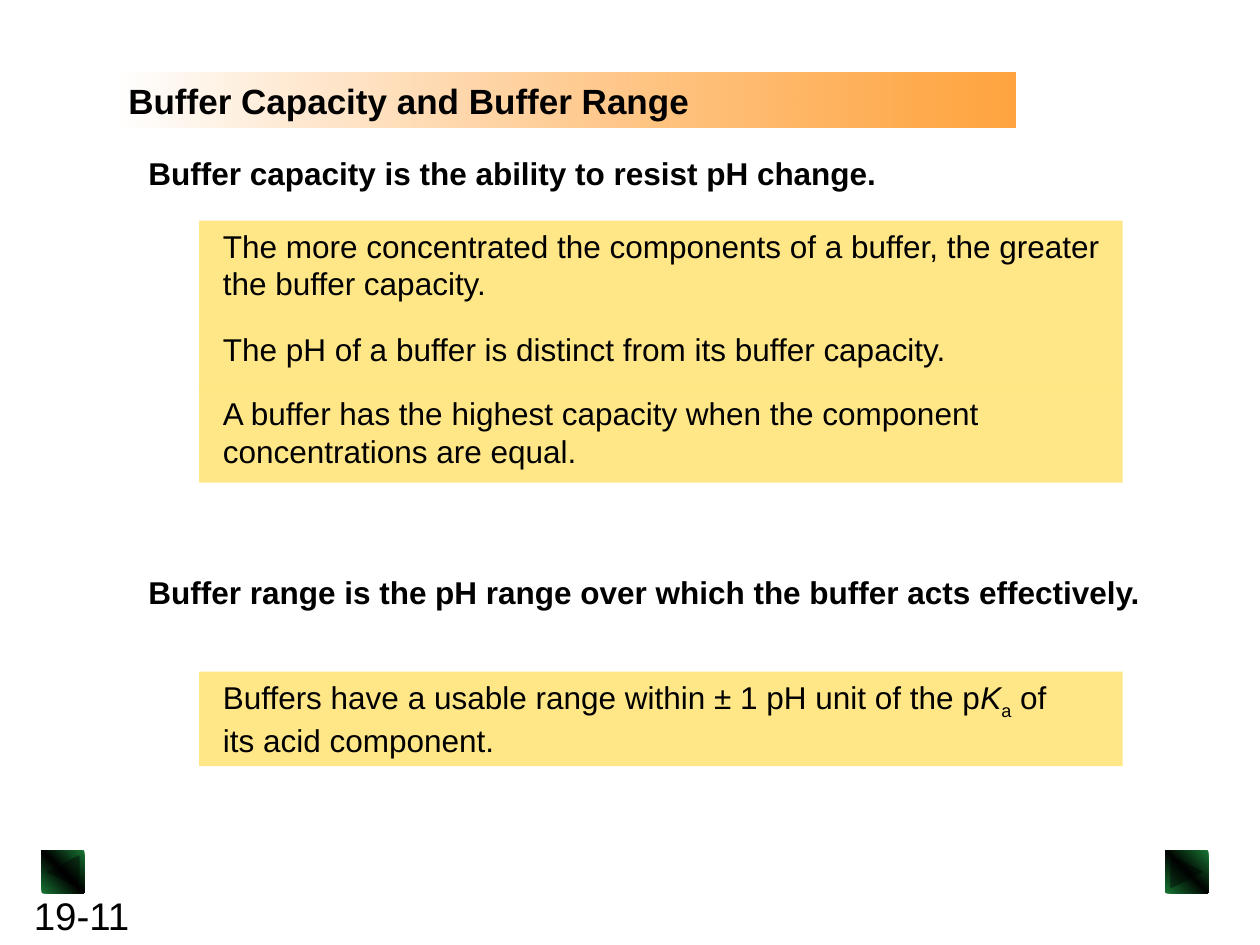
import pptx
import pptx.dml.color
import pptx.enum.shapes
import pptx.enum.text
import pptx.oxml
import pptx.oxml.ns
import pptx.util
from lxml import etree

Inches = pptx.util.Inches
SHAPE = pptx.enum.shapes.MSO_SHAPE
FONT = "Arial"
COLORS = {
    "text": "000000",
    "panel": "FFCC00",
    "band_start": "FFFFFF",
    "band_end": "FF9218",
    "button_edge": "187534",
    "next_core": "010502",
    "back_core": "000000",
}


def add_alpha(color_element, percent):
    alpha = etree.SubElement(color_element, pptx.oxml.ns.qn("a:alpha"))
    alpha.set("val", str(percent * 1000))


def set_gradient(sp, stops, angle):
    """Fill with (position %, colour key, opacity %) stops; angle is clockwise."""
    qn = pptx.oxml.ns.qn
    sp.fill.gradient()
    grad = sp.fill._xPr.find(qn("a:gradFill"))
    for child in list(grad):
        grad.remove(child)
    stop_list = etree.SubElement(grad, qn("a:gsLst"))
    for position, key, opacity in stops:
        stop = etree.SubElement(stop_list, qn("a:gs"), pos=str(position * 1000))
        color = etree.SubElement(stop, qn("a:srgbClr"), val=COLORS[key])
        if opacity < 100:
            add_alpha(color, opacity)
    etree.SubElement(grad, qn("a:lin"), ang=str(angle * 60000), scaled="0")


def add_plain_shape(slide, kind, left, top, width, height):
    sp = slide.shapes.add_shape(
        kind, Inches(left), Inches(top), Inches(width), Inches(height))
    sp.shadow.inherit = False
    sp.line.fill.background()
    return sp


def write_lines(tf, lines, size, bold=False):
    """Each line is a list of (text, style) runs; style is '', 'italic' or 'sub'."""
    tf.word_wrap = False
    tf.vertical_anchor = pptx.enum.text.MSO_ANCHOR.TOP
    for i, line in enumerate(lines):
        p = tf.paragraphs[0] if i == 0 else tf.add_paragraph()
        p.alignment = pptx.enum.text.PP_ALIGN.LEFT
        for text, style in line:
            r = p.add_run()
            r.text = text
            r.font.name = FONT
            r.font.size = pptx.util.Pt(size)
            r.font.bold = bold
            r.font.italic = style == "italic"
            r.font.color.rgb = pptx.dml.color.RGBColor.from_string(COLORS["text"])
            if style == "sub":
                r._r.get_or_add_rPr().set("baseline", "-25000")


def add_text(slide, left, top, width, height, lines, size=18, bold=False):
    box = slide.shapes.add_textbox(
        Inches(left), Inches(top), Inches(width), Inches(height))
    write_lines(box.text_frame, lines, size, bold)


def add_title_band(slide, left, top, width, height, title):
    sp = add_plain_shape(slide, SHAPE.RECTANGLE, left, top, width, height)
    set_gradient(sp, [(0, "band_start", 100), (100, "band_end", 83)], 0)
    write_lines(sp.text_frame, [[(title, "")]], 20, bold=True)


def add_panel(slide, left, top, width, height, lines, text_drop=0):
    sp = add_plain_shape(slide, SHAPE.RECTANGLE, left, top, width, height)
    sp.fill.solid()
    sp.fill.fore_color.rgb = pptx.dml.color.RGBColor.from_string(COLORS["panel"])
    add_alpha(sp.fill._xPr.find(".//" + pptx.oxml.ns.qn("a:srgbClr")), 47)
    add_text(slide, left + 0.09, top + text_drop, width - 0.15,
             0.1 + 0.3 * len(lines), lines)


def add_section(slide, left, top, width, heading, panel_top, panels):
    """Bold heading above a stack of touching panels."""
    add_text(slide, left, top, width, 0.4, [[(heading, "")]], bold=True)
    for height, text_drop, lines in panels:
        add_panel(slide, left + 0.5, panel_top, 7.33, height, lines, text_drop)
        panel_top += height


def add_footer(slide, left, top, number):
    size = 0.34
    buttons = [
        (SHAPE.ACTION_BUTTON_FORWARD_OR_NEXT, left + 8.92, "next_core"),
        (SHAPE.ACTION_BUTTON_BACK_OR_PREVIOUS, left, "back_core"),
    ]
    for kind, x, core in buttons:
        sp = add_plain_shape(slide, kind, x, top, size, size)
        set_gradient(sp, [(0, "button_edge", 100), (50, core, 100),
                          (100, "button_edge", 100)], 315)
    add_text(slide, left - 0.16, top + 0.28, 1.08, 0.47, [[(number, "")]], size=22)


def main():
    prs = pptx.Presentation()
    prs.slide_width, prs.slide_height = Inches(10), Inches(7.5)
    slide = prs.slides.add_slide(prs.slide_layouts[6])

    # Page number and navigation
    add_footer(slide, 0.33, 6.75, "19-11")

    # Title
    add_title_band(slide, 0.92, 0.58, 7.14, 0.43, "Buffer Capacity and Buffer Range")

    # Buffer capacity
    add_section(
        slide, 1.08, 1.17, 5.98,
        "Buffer capacity is the ability to resist pH change.", 1.75,
        [
            (0.75, 0, [
                [("The more concentrated the components of a buffer, the greater", "")],
                [("the buffer capacity.", "")]]),
            (0.58, 0.07, [
                [("The pH of a buffer is distinct from its buffer capacity.", "")]]),
            (0.75, 0, [
                [("A buffer has the highest capacity when the component", "")],
                [("concentrations are equal.", "")]]),
        ])

    # Buffer range
    add_section(
        slide, 1.08, 4.5, 8.09,
        "Buffer range is the pH range over which the buffer acts effectively.", 5.33,
        [
            (0.75, 0, [
                [("Buffers have a usable range within ± 1 pH unit of the p", ""),
                 ("K", "italic"), ("a", "sub"), (" of", "")],
                [("its acid component.", "")]]),
        ])

    prs.save("out.pptx")


if __name__ == "__main__":
    main()
